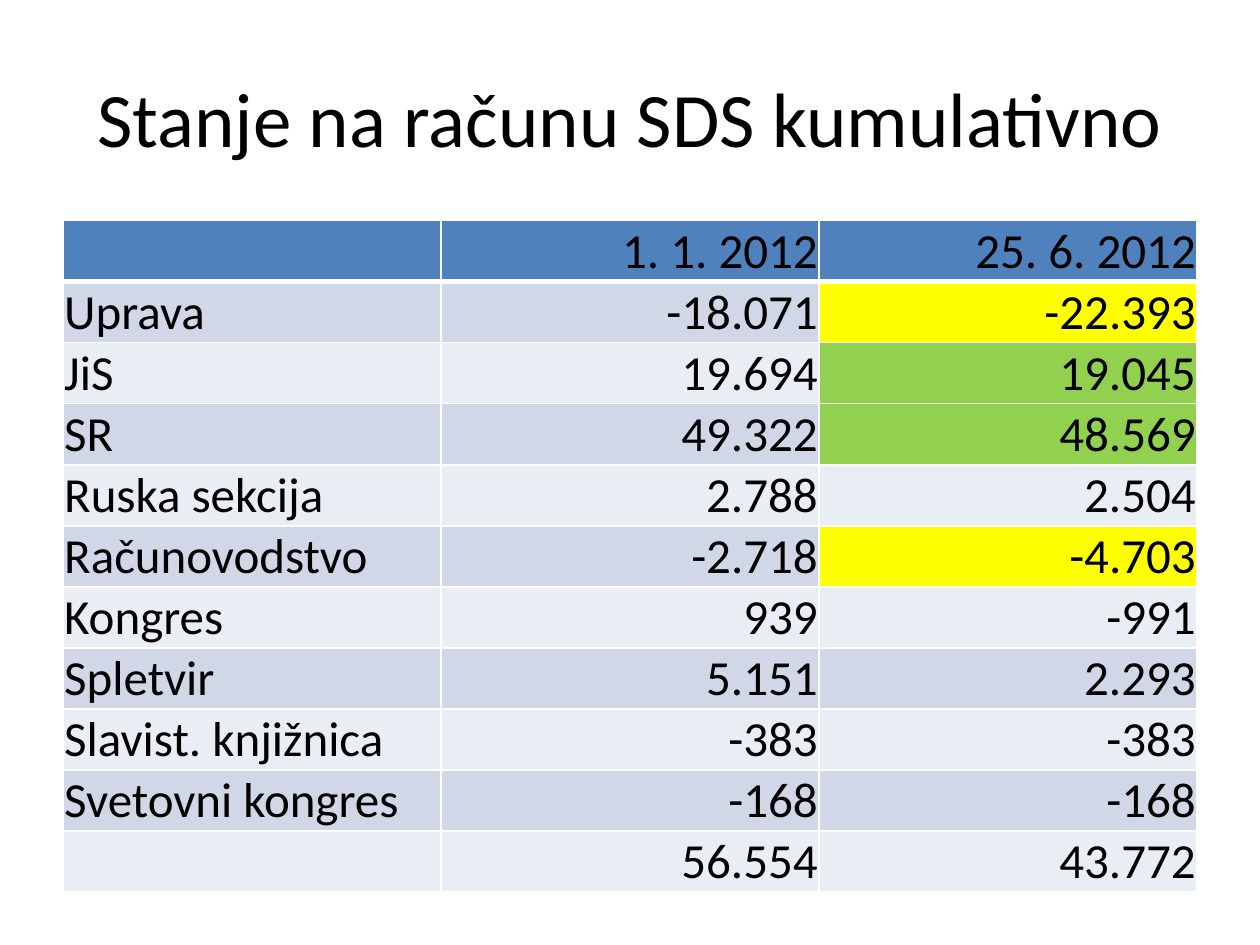
from lxml.etree import SubElement
from pptx import Presentation
from pptx.dml.color import RGBColor
from pptx.enum.text import MSO_ANCHOR, PP_ALIGN
from pptx.oxml.ns import qn
from pptx.util import Pt

FONT = "Calibri"
BLACK = RGBColor(0x00, 0x00, 0x00)
WHITE = RGBColor(0xFF, 0xFF, 0xFF)
BLUE = RGBColor(0x4F, 0x81, 0xBD)
DARK = RGBColor(0xD0, 0xD8, 0xE8)
LIGHT = RGBColor(0xE9, 0xED, 0xF4)
YELLOW = RGBColor(0xFF, 0xFF, 0x00)
GREEN = RGBColor(0x92, 0xD0, 0x50)

ROWS = [
    ("", "1. 1. 2012", "25. 6. 2012"),
    ("Uprava", "-18.071", "-22.393"),
    ("JiS", "19.694", "19.045"),
    ("SR", "49.322", "48.569"),
    ("Ruska sekcija", "2.788", "2.504"),
    ("Računovodstvo", "-2.718", "-4.703"),
    ("Kongres", "939", "-991"),
    ("Spletvir", "5.151", "2.293"),
    ("Slavist. knjižnica", "-383", "-383"),
    ("Svetovni kongres", "-168", "-168"),
    ("", "56.554", "43.772"),
]
MARKS = {"Uprava": YELLOW, "JiS": GREEN, "SR": GREEN, "Računovodstvo": YELLOW}


def set_text(frame, text, size, align):
    frame.text = text
    line = frame.paragraphs[0]
    line.alignment = align
    font = line.font
    if line.runs:
        font = line.runs[0].font
    font.name = FONT
    font.size = Pt(size)
    font.bold = False
    font.color.rgb = BLACK


def add_title(slide, left, top, width, height):
    box = slide.shapes.add_textbox(Pt(left), Pt(top), Pt(width), Pt(height))
    frame = box.text_frame
    frame.word_wrap = True
    frame.vertical_anchor = MSO_ANCHOR.MIDDLE
    set_text(frame, "Stanje na računu SDS kumulativno", 44, PP_ALIGN.CENTER)


def set_borders(cell, top, bottom):
    """Draw white cell edges; must run before the cell gets its fill."""
    props = cell._tc.get_or_add_tcPr()
    for side, width in (("L", 1), ("R", 1), ("T", top), ("B", bottom)):
        edge = SubElement(props, qn(f"a:ln{side}"), w=str(Pt(width)))
        fill = SubElement(edge, qn("a:solidFill"))
        SubElement(fill, qn("a:srgbClr"), val=str(WHITE))


def pick_fill(row, col):
    if row == 0:
        return BLUE
    band = DARK if row % 2 else LIGHT
    return MARKS.get(ROWS[row][0], band) if col == 2 else band


def add_balance(slide, left, top, width, height):
    count = len(ROWS)
    table = slide.shapes.add_table(
        count, 3, Pt(left), Pt(top), Pt(width), Pt(height)).table
    for col in table.columns:
        col.width = Pt(width / 3)
    for i, values in enumerate(ROWS):
        table.rows[i].height = Pt(height / count)
        for j, value in enumerate(values):
            cell = table.cell(i, j)
            cell.margin_left = cell.margin_right = cell.margin_top = Pt(0.72)
            cell.margin_bottom = 0
            cell.vertical_anchor = MSO_ANCHOR.BOTTOM
            set_borders(cell, 3 if i == 1 else 1, 3 if i == 0 else 1)
            cell.fill.solid()
            cell.fill.fore_color.rgb = pick_fill(i, j)
            align = PP_ALIGN.RIGHT if j else PP_ALIGN.LEFT
            set_text(cell.text_frame, value, 28, align)


def main():
    deck = Presentation()
    deck.slide_width, deck.slide_height = Pt(720), Pt(540)
    slide = deck.slides.add_slide(deck.slide_layouts[6])
    add_title(slide, 36, 21.6, 648, 90)
    add_balance(slide, 36, 126, 648, 383.9)
    deck.save("out.pptx")


if __name__ == "__main__":
    main()
